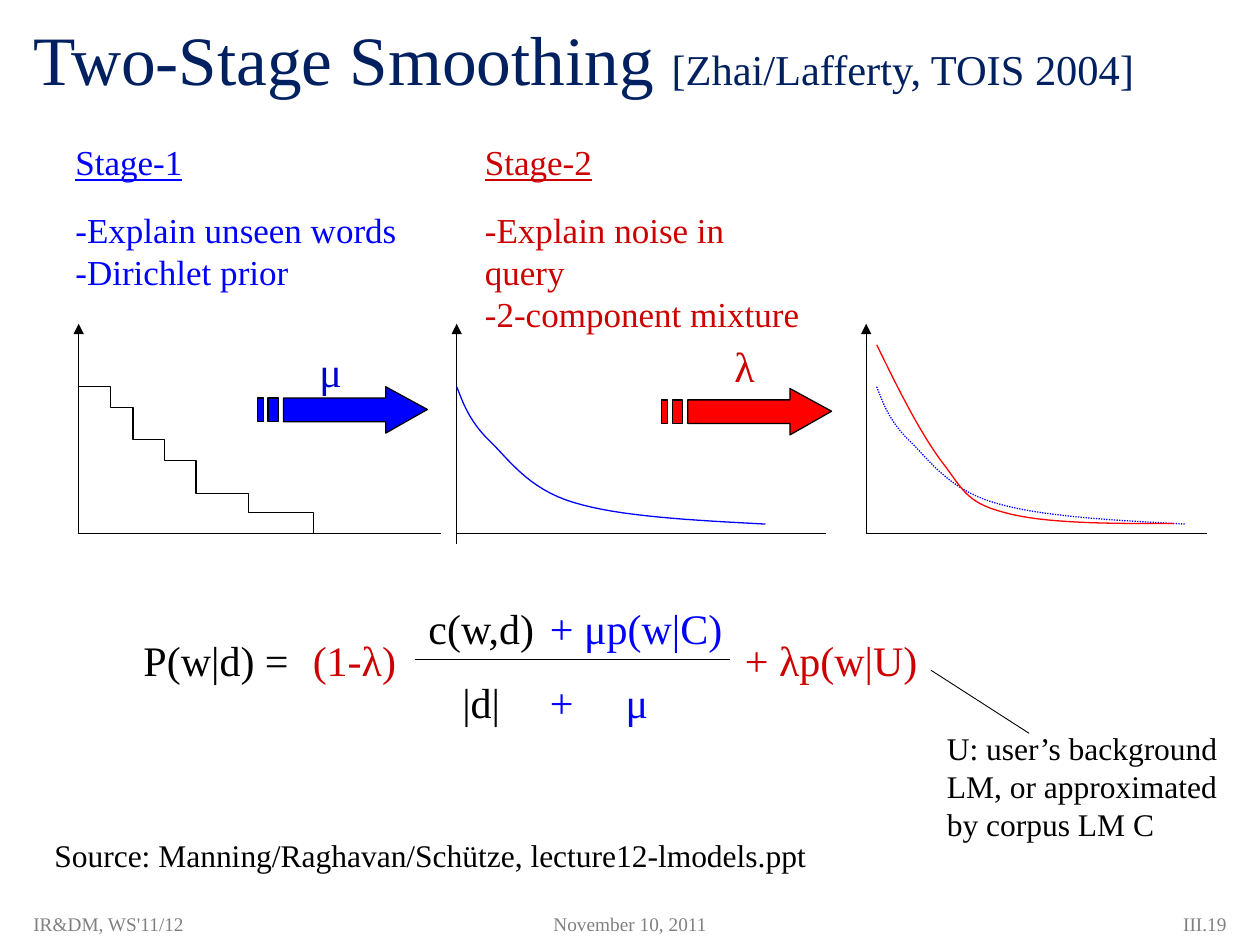
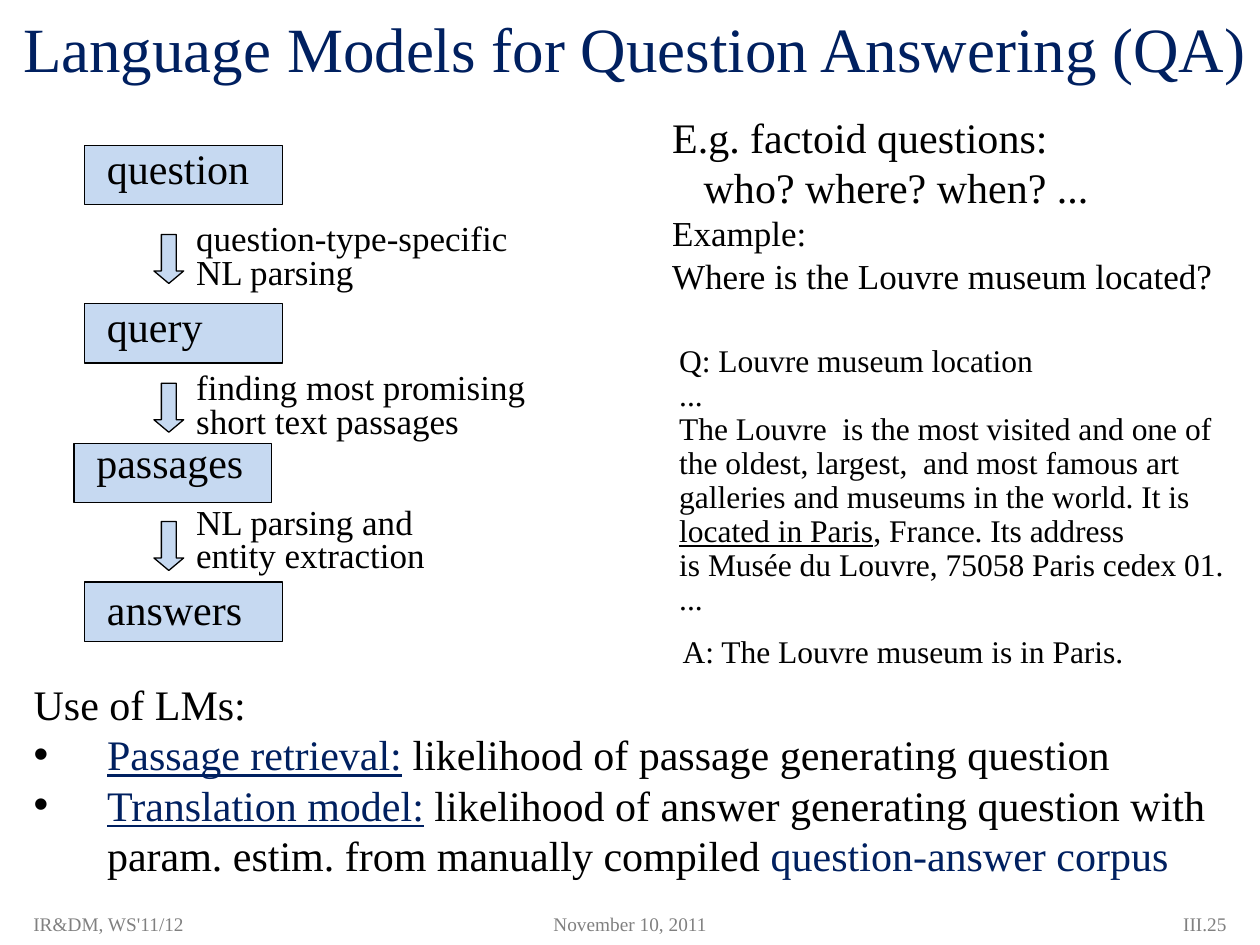
from lxml.etree import SubElement
from pptx import Presentation
from pptx.dml.color import RGBColor
from pptx.enum.dml import MSO_LINE
from pptx.enum.shapes import MSO_CONNECTOR, MSO_SHAPE
from pptx.enum.text import MSO_ANCHOR, MSO_AUTO_SIZE, PP_ALIGN
from pptx.oxml.ns import qn
from pptx.util import Pt

# Shared look
FONT = "Times New Roman"
BLACK, NAVY, GRAY = "000000", "002060", "808080"
BLUE, DARK_BLUE, RED, DARK_RED = "0000FF", "0000CC", "FF0000", "CC0000"
PALE_BLUE = "C6D9F1"
LEFT, CENTER, RIGHT = PP_ALIGN.LEFT, PP_ALIGN.CENTER, PP_ALIGN.RIGHT
TITLE_ONLY, TITLE_AND_BODY = 5, 1

# Bézier control points, relative to the start of each curve
SMOOTHED = [(0, 0), (3.6, 9.4), (7.2, 19.4), (18, 30.2), (29.5, 41),
            (40.3, 58.3), (67, 66.2), (93, 74.2), (134.6, 76.3), (176.4, 78.5)]
MIXED = [(0, 0), (12.2, 25.2), (24.5, 49.7), (36.7, 66.2), (49, 82),
         (50.4, 90), (72.7, 95.8), (95, 102.2), (132.5, 102.2), (170, 102.2)]
# Striped arrow: the arrow and its two stripes
ARROW_PARTS = [
    [(73.4, 0), (73.4, 6.5), (15, 6.5), (15, 20), (73.4, 20), (73.4, 26.5), (97.2, 13)],
    [(6.2, 6.5), (6.2, 20), (12.2, 20), (12.2, 6.5)],
    [(0, 6.5), (0, 20), (3.4, 20), (3.4, 6.5)],
]


def rgb(color):
    return RGBColor.from_string(color)


def points(*values):
    return [Pt(value) for value in values]


def place(shape, box):
    shape.left, shape.top, shape.width, shape.height = points(*box)


def add_run(paragraph, text, size, color, underline=None):
    run = paragraph.add_run()
    run.text = text
    run.font.name = FONT
    run.font.size = Pt(size)
    run.font.color.rgb = rgb(color)
    run.font.underline = underline


def add_text(slide, box, lines, size=24, color=BLACK, align=LEFT, wrap=False,
             spacing=None):
    """Write one paragraph per line; a line is a string or a list of runs."""
    frame = slide.shapes.add_textbox(*points(*box)).text_frame
    frame.word_wrap = wrap
    if not wrap:
        frame.auto_size = MSO_AUTO_SIZE.SHAPE_TO_FIT_TEXT
    for number, line in enumerate(lines):
        paragraph = frame.add_paragraph() if number else frame.paragraphs[0]
        paragraph.alignment = align
        paragraph.line_spacing = spacing
        for run in [(line, size, color)] if isinstance(line, str) else line:
            add_run(paragraph, *run)
    return frame


def add_slide(prs, layout, title_box, title_runs, page):
    """Start a slide with its title and the three footers."""
    slide = prs.slides.add_slide(prs.slide_layouts[layout])
    title = slide.shapes.title
    place(title, title_box)
    frame = title.text_frame
    frame.auto_size = MSO_AUTO_SIZE.NONE
    frame.vertical_anchor = MSO_ANCHOR.MIDDLE
    frame.paragraphs[0].alignment = LEFT
    for text, size in title_runs:
        add_run(frame.paragraphs[0], text, size, NAVY)
    for left, width, align, text in [(12, 216, LEFT, "IR&DM, WS'11/12"),
                                     (276, 168, CENTER, "November 10, 2011"),
                                     (552, 156, RIGHT, page)]:
        footer = add_text(slide, (left, 516, width, 24), [text], 11, GRAY, align, True)
        footer.vertical_anchor = MSO_ANCHOR.MIDDLE
    return slide


def add_line(slide, start, end, width=0.75, arrow=False):
    line = slide.shapes.add_connector(MSO_CONNECTOR.STRAIGHT, *points(*start, *end))
    line.line.color.rgb = rgb(BLACK)
    line.line.width = Pt(width)
    if arrow:
        SubElement(line.line._get_or_add_ln(), qn("a:tailEnd"), type="triangle")
    SubElement(line._element.spPr, qn("a:effectLst"))


def paint(shape, fill, line=BLACK):
    shape.shadow.inherit = False
    if fill:
        shape.fill.solid()
        shape.fill.fore_color.rgb = rgb(fill)
    else:
        shape.fill.background()
    shape.line.color.rgb = rgb(line)
    shape.line.width = Pt(0.75)


def add_outline(slide, parts, fill=None, line=BLACK):
    """Draw the parts as one freeform, closed when it is filled."""
    builder = slide.shapes.build_freeform(*points(*parts[0][0]), scale=1.0)
    for number, part in enumerate(parts):
        if number:
            builder.move_to(*points(*part[0]))
        builder.add_line_segments([points(*p) for p in part[1:]], close=bool(fill))
    shape = builder.convert_to_shape()
    paint(shape, fill, line)
    return shape


def shifted(part, left, top):
    return [(left + x, top + y) for x, y in part]


def bezier(controls, steps=16):
    """Sample a chain of cubic Bézier pieces."""
    curve = [controls[0]]
    for first in range(0, len(controls) - 1, 3):
        piece = controls[first:first + 4]
        for step in range(1, steps + 1):
            t = step / steps
            weights = ((1 - t) ** 3, 3 * t * (1 - t) ** 2, 3 * t * t * (1 - t), t ** 3)
            curve.append(tuple(sum(w * p[axis] for w, p in zip(weights, piece))
                               for axis in (0, 1)))
    return curve


def add_curve(slide, controls, left, top, color):
    return add_outline(slide, [shifted(bezier(controls), left, top)], line=color)


def add_axes(slide, left, right, foot=305):
    add_line(slide, (left, 305), (right, 305))
    add_line(slide, (left, foot), (left, 185), arrow=True)


def add_stage(slide, left, width, heading, notes, color, wrap):
    frame = add_text(slide, (left, 77, width, 94),
                     [[(heading, 20, color, True)], *notes], 20, color, wrap=wrap)
    frame.paragraphs[1].space_before = Pt(14.4)


def add_striped_arrow(slide, left, top, color):
    add_outline(slide, [shifted(part, left, top) for part in ARROW_PARTS], color)


def smoothing_slide(prs):
    slide = add_slide(prs, TITLE_ONLY, (12, 6, 696, 54),
                      [("Two-Stage Smoothing ", 39.6),
                       ("[Zhai/Lafferty, TOIS 2004]", 24.3)], "III.19")

    # The two stages
    add_stage(slide, 36, 199, "Stage-1",
              ["-Explain unseen words", "-Dirichlet prior"], BLUE, False)
    add_stage(slide, 270, 198, "Stage-2",
              ["-Explain noise in query", "-2-component mixture"], DARK_RED, True)

    # Raw counts as a staircase
    add_axes(slide, 45, 252)
    staircase = [(45, 221)]
    for x, y in [(63, 233), (76, 251), (94, 263), (112, 282), (142, 293), (179, 305)]:
        staircase += [(x, staircase[-1][1]), (x, y)]
    add_outline(slide, [staircase + [(210, 305)]])

    # Smoothed once, then mixed with the background
    add_axes(slide, 261, 472, foot=311)
    add_curve(slide, SMOOTHED, 261, 221, BLUE)
    add_axes(slide, 495, 690)
    first_stage = add_curve(slide, SMOOTHED, 501, 221, BLUE)
    first_stage.line.dash_style = MSO_LINE.ROUND_DOT
    add_curve(slide, MIXED, 501, 197, RED)
    add_striped_arrow(slide, 147, 221, BLUE)
    add_striped_arrow(slide, 378, 222, RED)

    # Formula terms and arrow labels
    add_line(slide, (237, 377), (417, 377))
    for left, top, width, term, color in [
            (175, 194, 28, "μ", DARK_BLUE), (412, 191, 27, "λ", DARK_RED),
            (71, 359, 105, "P(w|d) =", BLACK), (171, 359, 63, "(1-λ)", DARK_RED),
            (237, 341, 76, "c(w,d)", BLACK), (306, 341, 115, "+ μp(w|C)", BLUE),
            (257, 383, 36, "|d|", BLACK), (307, 383, 28, "+", BLUE),
            (350, 383, 28, "μ", BLUE), (415, 359, 120, "+ λp(w|U)", DARK_RED)]:
        add_text(slide, (left, top, width, 36), [term], color=color, align=CENTER)

    # Note on U and source
    add_line(slide, (532, 383), (588, 419), 0.5)
    add_text(slide, (534, 413, 170, 73),
             ["U: user’s background", "LM, or approximated", "by corpus LM C"], 18)
    add_text(slide, (24, 474, 449, 29),
             ["Source: Manning/Raghavan/Schütze, lecture12-lmodels.ppt"], 18)


def add_block(slide, kind, box):
    block = slide.shapes.add_shape(kind, *points(*box))
    paint(block, PALE_BLUE)
    return block


def add_uses(slide):
    """Fill the body placeholder: (bulleted, left margin, runs)."""
    body = slide.placeholders[1]
    place(body, (12, 384, 700, 124))
    frame = body.text_frame
    frame.auto_size = MSO_AUTO_SIZE.NONE
    uses = [
        (False, 0, [("Use of LMs:", BLACK)]),
        (True, 42, [("Passage retrieval:", NAVY, True),
                    (" likelihood of passage generating question", BLACK)]),
        (True, 42, [("Translation model:", NAVY, True),
                    (" likelihood of answer generating question with", BLACK)]),
        (False, 42, [("param. estim. from manually compiled ", BLACK),
                     ("question-answer corpus", NAVY)]),
    ]
    for number, (bulleted, margin, runs) in enumerate(uses):
        paragraph = frame.add_paragraph() if number else frame.paragraphs[0]
        paragraph.space_before = Pt(0)
        properties = paragraph._p.get_or_add_pPr()
        properties.set("marL", str(Pt(margin)))
        properties.set("indent", str(Pt(-margin if bulleted else 0)))
        if bulleted:
            bullet_color = SubElement(properties, qn("a:buClr"))
            SubElement(bullet_color, qn("a:srgbClr"), val=BLACK)
            SubElement(properties, qn("a:buChar"), char="•")
        else:
            SubElement(properties, qn("a:buNone"))
        for text, color, *underline in runs:
            add_run(paragraph, text, 24, color, *underline)


def answering_slide(prs):
    slide = add_slide(prs, TITLE_AND_BODY, (6, 0, 719, 54),
                      [("Language Models for Question Answering (QA)", 36)], "III.25")

    # Pipeline from question to answers
    for left, top, label_top, label_width, label in [
            (48.3, 83, 78, 96, "question"), (48.3, 173.5, 168, 70, "query"),
            (42.3, 253.3, 246, 103, "passages"), (48.3, 332.5, 330, 93, "answers")]:
        add_block(slide, MSO_SHAPE.RECTANGLE, (left, top, 113, 34))
        add_text(slide, (left + 5.7, label_top, label_width, 36), [label])
    for top, note_top, width, note in [
            (134, 125, 199, ["question-type-specific", "NL parsing"]),
            (219, 210, 204, ["finding most promising", "short text passages"]),
            (298, 287, 146, ["NL parsing and", "entity extraction"])]:
        arrow = add_block(slide, MSO_SHAPE.DOWN_ARROW, (88, top, 17, 28))
        arrow.adjustments[1] = 0.42
        add_text(slide, (105, note_top, width, 46), note, 20, spacing=0.8)

    # Worked example
    example = add_text(slide, (377, 60, 325, 114),
                       ["E.g. factoid questions:", "who? where? when? ...",
                        [("Example:", 20, BLACK)],
                        [("Where is the Louvre museum located?", 20, BLACK)]])
    example.paragraphs[1]._p.get_or_add_pPr().set("marL", str(Pt(18)))
    passage = ["...", "The Louvre  is the most visited and one of",
               "the oldest, largest,  and most famous art",
               "galleries and museums in the world. It is",
               [("located in Paris", 18, BLACK, True),
                (", France. Its address", 18, BLACK)],
               "is Musée du Louvre, 75058 Paris cedex 01.", "..."]
    for box, lines in [((381, 194, 219, 27), ["Q: Louvre museum location"]),
                       ((381, 213, 339, 144), passage),
                       ((383, 360, 269, 27), ["A: The Louvre museum is in Paris."])]:
        add_text(slide, box, lines, 18, spacing=0.9)

    add_uses(slide)


def main():
    prs = Presentation()
    prs.slide_width, prs.slide_height = points(720, 540)
    smoothing_slide(prs)
    answering_slide(prs)
    prs.save("out.pptx")


if __name__ == "__main__":
    main()
